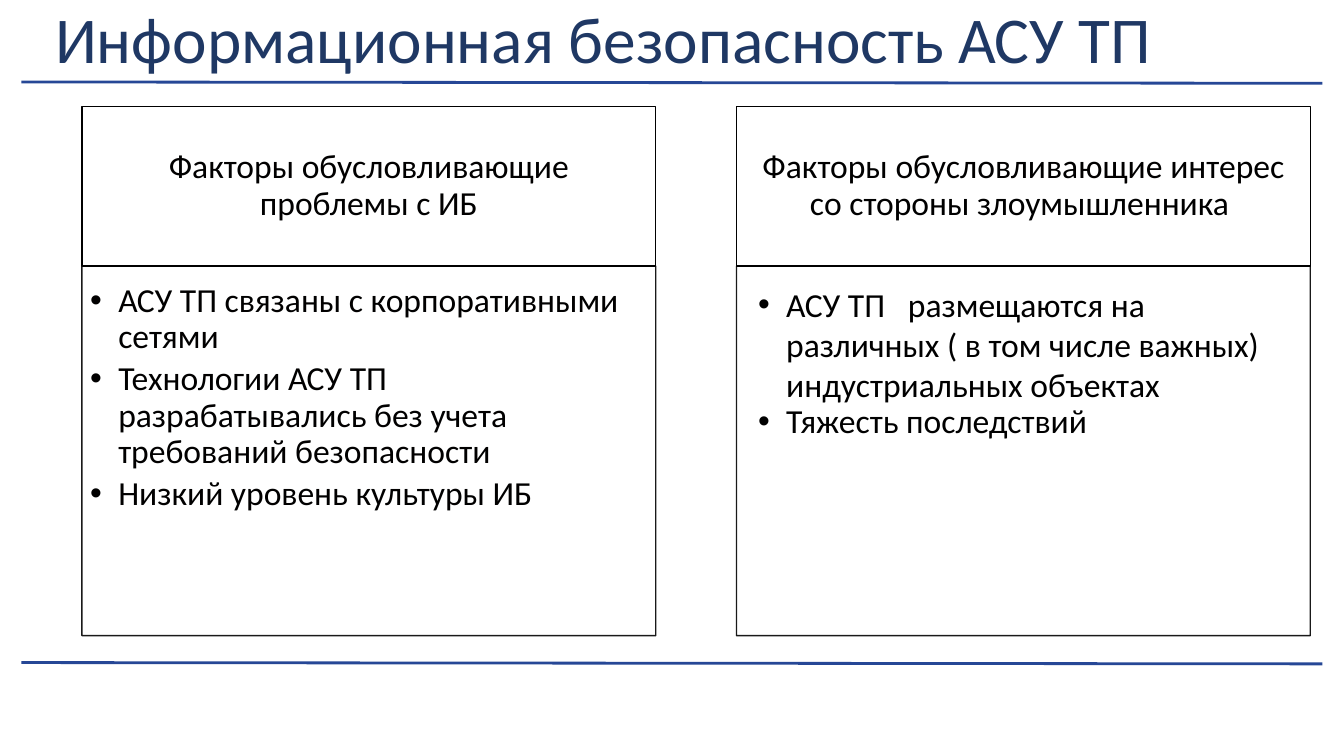
"""Build a slide on the information security of industrial control systems."""
from lxml import etree
from pptx import Presentation, util as u
from pptx.dml.color import RGBColor
from pptx.enum import shapes, text
from pptx.oxml import ns

COLORS = {"title": "1F3864", "rule": "264796", "left": "010000",
          "right": "000000", "border": "000000", "panel": "FFFFFF"}
PANEL_WIDTH = 4.27
HEADING_TOP, HEADING_HEIGHT = 0.79, 1.19
LIST_TOP, LIST_HEIGHT = HEADING_TOP + HEADING_HEIGHT, 2.75
COLUMNS = [
    {"left": 0.61, "color": "left", "shift": 0.1, "spacing": 0.9, "gap": 3,
     "heading": [("Факторы обусловливающие проблемы с ИБ", "left")],
     "items": ["АСУ ТП связаны с корпоративными сетями",
               "Технологии АСУ ТП разрабатывались без учета требований безопасности",
               "Низкий уровень культуры ИБ"]},
    {"left": 5.48, "color": "right", "shift": 0, "spacing": 1.0, "gap": 0,
     "heading": [("Факторы ", "right"), ("обусловливающие ", "left"),
                 ("интерес со стороны злоумышленника ", "right")],
     "items": ["АСУ ТП   размещаются на различных ( в том числе важных) индустриальных объектах",
               "Тяжесть последствий"]},
]


class SlideBuilder:
    """Hold the slide style and add each kind of element."""

    def __init__(self, page, font="Calibri", size=18):
        self.page, self.font, self.size = page, font, size

    def color(self, name):
        """Return a palette colour."""
        return RGBColor.from_string(COLORS[name])

    def rule(self, top):
        """Draw a slightly sloping rule across the slide."""
        line = self.page.shapes.add_connector(
            shapes.MSO_CONNECTOR.STRAIGHT, u.Inches(0.16), u.Inches(top),
            u.Inches(9.84), u.Inches(top + 0.01))
        line.line.color.rgb = self.color("rule")
        line.line.width = u.Pt(1.5)
        etree.SubElement(line._element.spPr, ns.qn("a:effectLst"))

    def panel(self, area, alpha=None):
        """Draw a bordered panel behind the placeholders."""
        panel = self.page.shapes.add_shape(
            shapes.MSO_SHAPE.RECTANGLE, *map(u.Inches, area))
        panel.shadow.inherit = False
        panel.fill.solid()
        panel.fill.fore_color.rgb = self.color("panel")
        panel.line.color.rgb = self.color("border")
        panel.line.width = u.Pt(0.75)
        if alpha:
            for tone in panel._element.spPr.iter(ns.qn("a:srgbClr")):
                etree.SubElement(tone, ns.qn("a:alpha"), val=str(alpha * 1000))
        self.page.shapes._spTree.insert(2, panel._element)

    def place(self, box, area, insets, anchor):
        """Move a placeholder and set its text frame."""
        box.left, box.top, box.width, box.height = map(u.Inches, area)
        frame = box.text_frame
        frame.word_wrap = True
        frame.auto_size = text.MSO_AUTO_SIZE.NONE
        frame.vertical_anchor = anchor
        (frame.margin_left, frame.margin_top,
         frame.margin_right, frame.margin_bottom) = map(u.Inches, insets)
        return frame

    def style(self, para, color, align, spacing=0.9, before=0, size=None):
        """Format a paragraph and its spans."""
        para.alignment = align
        para.line_spacing = spacing
        para.space_before = u.Pt(before)
        for span in para.runs:
            span.font.name = self.font
            span.font.size = u.Pt(size or self.size)
            span.font.bold = False
            span.font.color.rgb = self.color(color)

    def bullet(self, para, color):
        """Add a hanging round bullet to a paragraph."""
        props = para._p.get_or_add_pPr()
        props.set("marL", str(u.Inches(0.24)))
        props.set("indent", str(u.Inches(-0.21)))
        tone = etree.SubElement(props, ns.qn("a:buClr"))
        etree.SubElement(tone, ns.qn("a:srgbClr"), val=COLORS[color])
        etree.SubElement(props, ns.qn("a:buFont"), typeface="Arial")
        etree.SubElement(props, ns.qn("a:buChar"), char="•")

    def title(self, words):
        """Fill the title placeholder."""
        frame = self.place(self.page.shapes.title, (0.31, 0.08, 9.4, 0.47),
                           (0.1, 0.05, 0.1, 0.05), text.MSO_ANCHOR.MIDDLE)
        frame.text = words
        self.style(frame.paragraphs[0], "title", text.PP_ALIGN.LEFT, size=35)

    def heading(self, box, column):
        """Add a panel with a centred heading."""
        area = (column["left"], HEADING_TOP, PANEL_WIDTH, HEADING_HEIGHT)
        self.panel(area)
        frame = self.place(box, area, (0.17, 0.1, 0.17, 0.1),
                           text.MSO_ANCHOR.MIDDLE)
        para = frame.paragraphs[0]
        for words, _ in column["heading"]:
            para.add_run().text = words
        self.style(para, column["color"], text.PP_ALIGN.CENTER)
        for span, (_, color) in zip(para.runs, column["heading"]):
            span.font.color.rgb = self.color(color)

    def bullets(self, box, column):
        """Add a panel with a bulleted list."""
        left, shift = column["left"], column["shift"]
        self.panel((left, LIST_TOP, PANEL_WIDTH, LIST_HEIGHT), alpha=90)
        frame = self.place(
            box, (left - shift, LIST_TOP, PANEL_WIDTH + shift, LIST_HEIGHT),
            (0.13, 0.13, 0.17, 0.19), text.MSO_ANCHOR.TOP)
        frame.text = "\n".join(column["items"])
        for index, para in enumerate(frame.paragraphs):
            para.level = 1
            self.bullet(para, column["color"])
            self.style(para, column["color"], text.PP_ALIGN.LEFT,
                       spacing=0.9 if index else column["spacing"],
                       before=column["gap"] if index else 0)


def main():
    """Build and save the deck."""
    deck = Presentation()
    deck.slide_width = u.Inches(10)
    deck.slide_height = deck.slide_width * 9 // 16
    page = deck.slides.add_slide(deck.slide_layouts.get_by_name("Comparison"))
    builder = SlideBuilder(page)
    for top in (4.93, 0.61):
        builder.rule(top)
    builder.title("Информационная безопасность АСУ ТП")
    for index, column in enumerate(COLUMNS):
        builder.heading(page.placeholders[2 * index + 1], column)
        builder.bullets(page.placeholders[2 * index + 2], column)
    deck.save("out.pptx")


if __name__ == "__main__":
    main()
